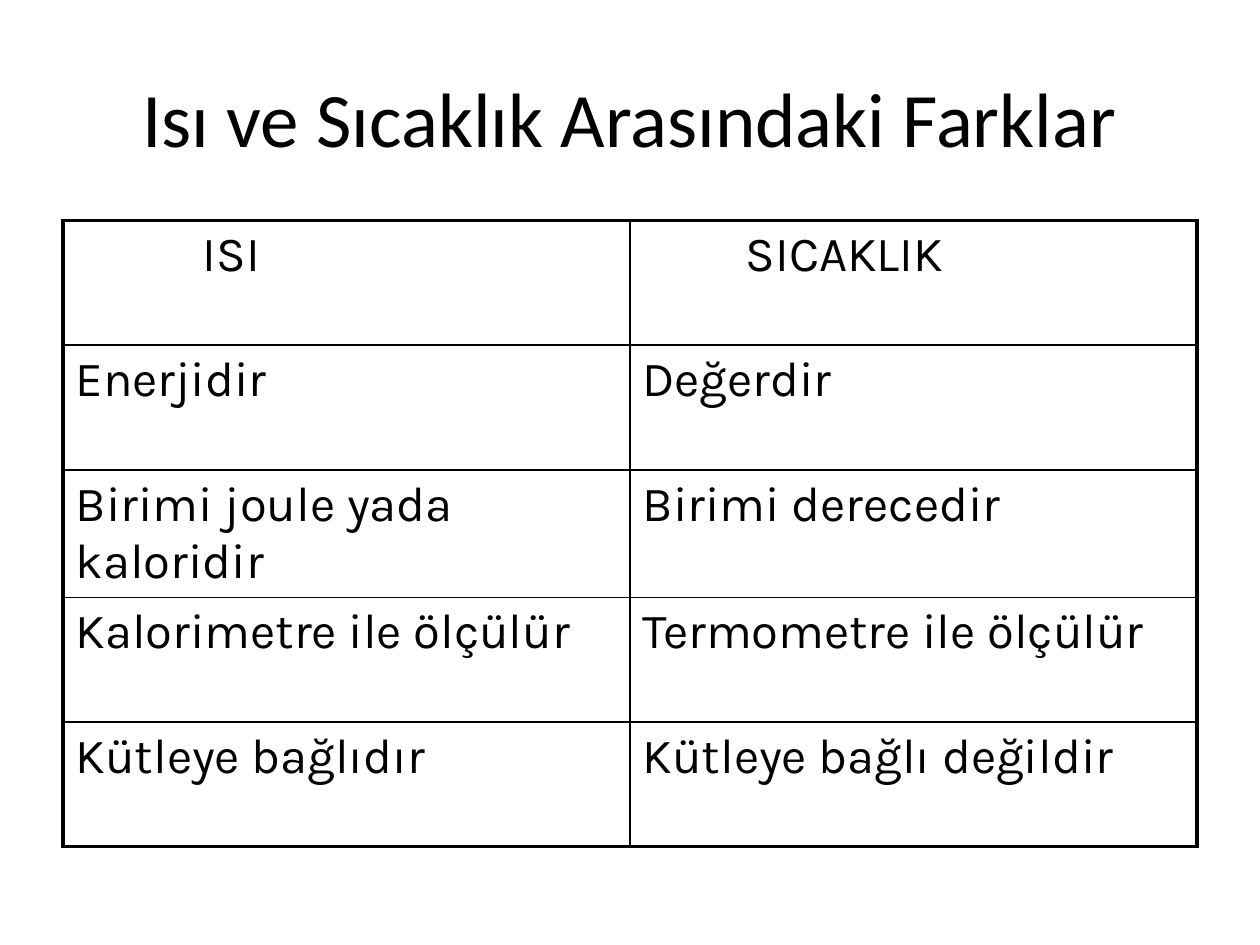
from lxml import etree
from pptx import Presentation, util as u
from pptx.dml.color import RGBColor
from pptx.enum import text as t
from pptx.oxml import ns

BLACK = RGBColor(0x00, 0x00, 0x00)
WIDTH, HEIGHT = u.Inches(10), u.Inches(7.5)
MARGIN = 0.05  # share of the slide width
THICK, THIN = u.Pt(2.25), u.Pt(1)
ROW_HEIGHT = u.Inches(0.99)

# Heat in the left column, temperature in the right one
COMPARISON = [
    ("ISI", "SICAKLIK"),
    ("Enerjidir", "Değerdir"),
    ("Birimi joule yada kaloridir", "Birimi derecedir"),
    ("Kalorimetre ile ölçülür", "Termometre ile ölçülür"),
    ("Kütleye bağlıdır", "Kütleye bağlı değildir"),
]
HEADER_INDENTS = (u.Inches(1.11), u.Inches(0.92))


def write(frame, content, font, size, align=t.PP_ALIGN.LEFT, before=0):
    frame.word_wrap = True
    paragraph = frame.paragraphs[0]
    paragraph.alignment = align
    paragraph.space_before = u.Pt(before)
    run = paragraph.add_run()
    run.text = content
    run.font.name = font
    run.font.size = u.Pt(size)
    run.font.color.rgb = BLACK


def set_borders(cell, widths):
    """Draw solid cell borders, given in the order left, right, top, bottom."""
    properties = cell._tc.get_or_add_tcPr()
    for position, (side, width) in enumerate(zip("LRTB", widths)):
        line = etree.Element(ns.qn(f"a:ln{side}"), w=str(int(width)))
        fill = etree.SubElement(line, ns.qn("a:solidFill"))
        etree.SubElement(fill, ns.qn("a:srgbClr"), val=str(BLACK))
        properties.insert(position, line)


def add_title(slide):
    title = slide.shapes.add_textbox(
        int(WIDTH * MARGIN), int(HEIGHT * 0.04),
        int(WIDTH * (1 - 2 * MARGIN)), u.Inches(1.25))
    title.text_frame.vertical_anchor = t.MSO_ANCHOR.MIDDLE
    write(title.text_frame, "Isı ve Sıcaklık Arasındaki Farklar",
          "Calibri", 44, align=t.PP_ALIGN.CENTER)


def add_comparison(slide):
    rows, columns = len(COMPARISON), len(COMPARISON[0])
    table = slide.shapes.add_table(
        rows, columns, int(WIDTH * MARGIN), u.Inches(1.75),
        int(WIDTH * (1 - 2 * MARGIN)), ROW_HEIGHT * rows).table
    table.first_row = table.horz_banding = False
    for r, entries in enumerate(COMPARISON):
        for c, entry in enumerate(entries):
            cell = table.cell(r, c)
            cell.fill.background()
            if r == 0:
                cell.margin_left = HEADER_INDENTS[c]
            write(cell.text_frame, entry, "Karla", 28, before=5.6)
            # Thick outer frame, thin inner lines
            outer = (c == 0, c == columns - 1, r == 0, r == rows - 1)
            set_borders(cell, [THICK if edge else THIN for edge in outer])


def main():
    deck = Presentation()
    deck.slide_width, deck.slide_height = WIDTH, HEIGHT
    slide = deck.slides.add_slide(deck.slide_layouts[6])
    add_comparison(slide)
    add_title(slide)
    deck.save("out.pptx")


if __name__ == "__main__":
    main()
